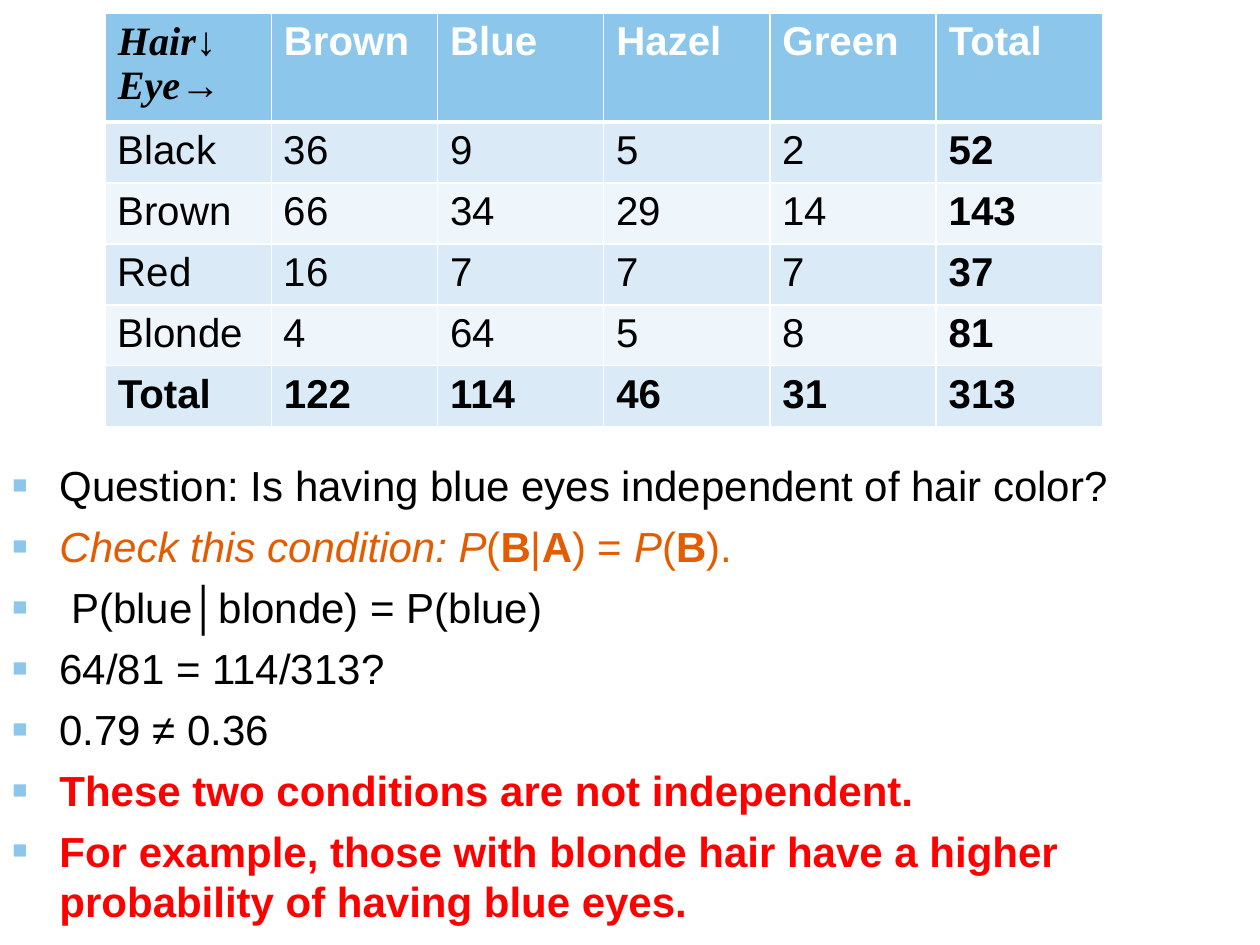
from dataclasses import dataclass

from lxml.etree import Element, SubElement as Sub
from pptx import Presentation
from pptx.dml.color import RGBColor as Rgb
from pptx.oxml.ns import qn
from pptx.util import Cm, Pt


@dataclass(frozen=True)
class Theme:
    sans: str = "Arial"
    serif: str = "Times New Roman"
    body: int = 24
    cell: int = 23
    black: str = "000000"
    white: str = "FFFFFF"
    blue: str = "8CC6EB"
    pale: str = "DAEAF7"
    faint: str = "EEF5FB"
    orange: str = "E35C01"
    red: str = "FF0000"


T = Theme()

ROWS = [
    ["Hair↓ Eye→", "Brown", "Blue", "Hazel", "Green", "Total"],
    ["Black", "36", "9", "5", "2", "52"],
    ["Brown", "66", "34", "29", "14", "143"],
    ["Red", "16", "7", "7", "7", "37"],
    ["Blonde", "4", "64", "5", "8", "81"],
    ["Total", "122", "114", "46", "31", "313"],
]

BOLD, SLANT = {"bold": True}, {"italic": True}
CHECK = [
    ("Check this condition: P", SLANT), ("(", {}), ("B", BOLD), ("|", {}),
    ("A", BOLD), (") = ", {}), ("P", SLANT), ("(", {}), ("B", BOLD), (").", {}),
]
POINTS = [
    (T.black, [("Question: Is having blue eyes independent of hair color?", {})]),
    (T.orange, CHECK),
    (T.black, [(" P(blue│blonde) = P(blue)", {})]),
    (T.black, [("64/81 = 114/313?", {})]),
    (T.black, [("0.79 ≠ 0.36", {})]),
    (T.red, [("These two conditions are not independent.", BOLD)]),
    (T.red, [("For example, those with blonde hair have a higher "
              "probability of having blue eyes.", BOLD)]),
]


def write(para, text, size=T.body, color=T.black, face=T.sans,
          bold=False, italic=False):
    run = para.add_run()
    run.text = text
    font = run.font
    font.name, font.size = face, Pt(size)
    font.bold, font.italic = bold, italic
    font.color.rgb = Rgb.from_string(color)


def tint(parent, color):
    Sub(parent, qn("a:srgbClr"), val=color)


def bullet(para):
    props = para._p.get_or_add_pPr()
    props.set("marL", str(Cm(0.95)))
    props.set("indent", str(-Cm(0.95)))
    tint(Sub(props, qn("a:buClr")), T.blue)
    Sub(props, qn("a:buSzPct"), val="60000")
    Sub(props, qn("a:buFont"), typeface=T.sans)
    Sub(props, qn("a:buChar"), char="■")


def border(cell, top, base):
    props = cell._tc.get_or_add_tcPr()
    sides = {"lnL": 1, "lnR": 1, "lnT": top, "lnB": base}
    for spot, (side, width) in enumerate(sides.items()):
        line = Element(qn(f"a:{side}"), w=str(Pt(width)))
        tint(Sub(line, qn("a:solidFill")), T.white)
        props.insert(spot, line)


def add_grid(slide):
    count = len(ROWS)
    wide, head, high = Cm(3.35), Cm(2.18), Cm(1.22)
    table = slide.shapes.add_table(
        count, count, Cm(2.12), Cm(0.26),
        wide * count, head + high * (count - 1)).table
    for col in table.columns:
        col.width = wide
    for r, row in enumerate(ROWS):
        table.rows[r].height = high if r else head
        for c, text in enumerate(row):
            cell = table.cell(r, c)
            cell.fill.solid()
            fill = (T.pale if r % 2 else T.faint) if r else T.blue
            cell.fill.fore_color.rgb = Rgb.from_string(fill)
            border(cell, 3 if r == 1 else 1, 1 if r else 3)
            corner = r == c == 0
            write(cell.text_frame.paragraphs[0], text, size=T.cell,
                  color=T.black if r or corner else T.white,
                  face=T.serif if corner else T.sans,
                  bold=r in (0, count - 1) or c == count - 1,
                  italic=corner)


def add_points(slide):
    box = slide.shapes.add_textbox(Cm(0), Cm(9.14), Cm(25.4), Cm(9.6))
    frame = box.text_frame
    frame.word_wrap = True
    frame.margin_right = 0
    for i, (color, parts) in enumerate(POINTS):
        para = frame.add_paragraph() if i else frame.paragraphs[0]
        para.space_before = Pt(6 if i else 0)
        bullet(para)
        for text, style in parts:
            write(para, text, color=color, **style)


def main():
    deck = Presentation()
    deck.slide_width, deck.slide_height = Cm(25.4), Cm(19.05)
    slide = deck.slides.add_slide(deck.slide_layouts[6])
    add_points(slide)
    add_grid(slide)
    deck.save("out.pptx")


if __name__ == "__main__":
    main()
